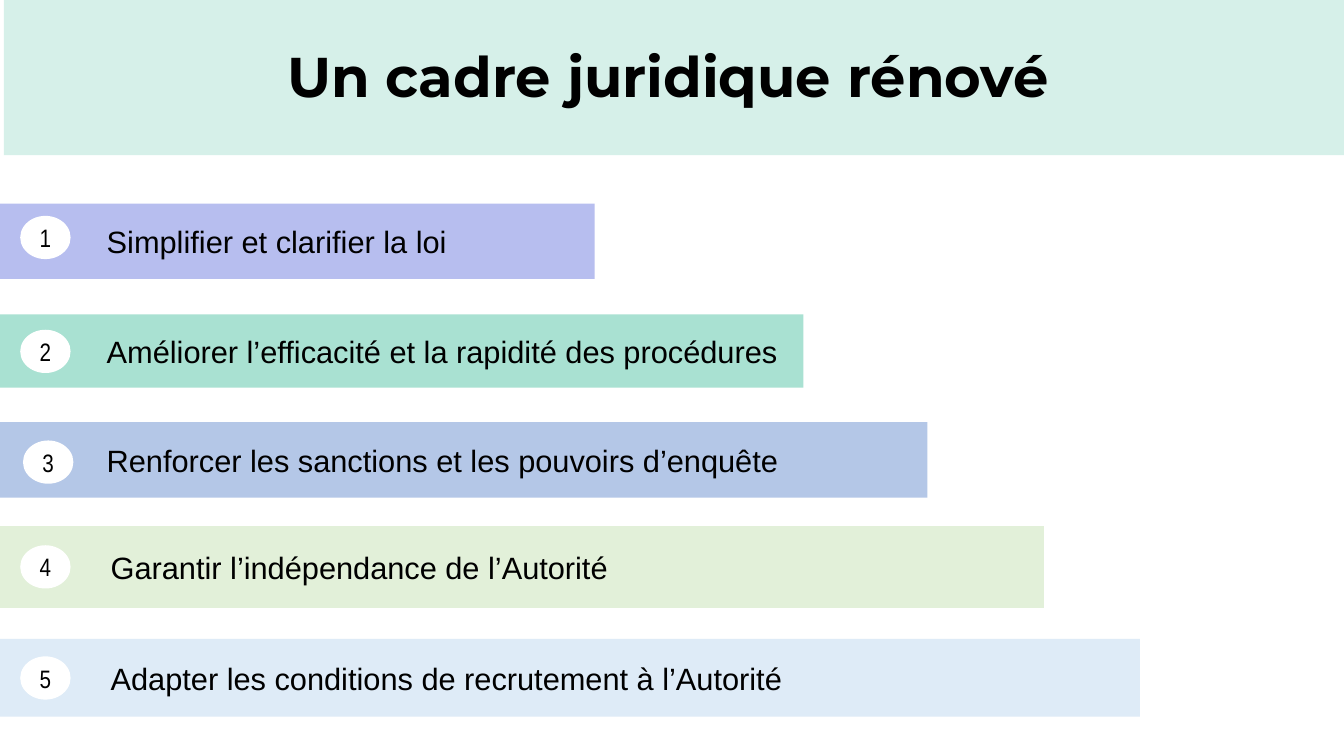
import pptx
import pptx.dml.color
import pptx.enum.shapes
import pptx.enum.text
import pptx.util
from lxml import etree
from pptx.oxml.ns import qn

Cm = pptx.util.Cm
RGBColor = pptx.dml.color.RGBColor
SHAPE = pptx.enum.shapes.MSO_SHAPE
ALIGN = pptx.enum.text.PP_ALIGN

BLACK = RGBColor(0x00, 0x00, 0x00)
WHITE = RGBColor(0xFF, 0xFF, 0xFF)
MINT = RGBColor(0x99, 0xDB, 0xCA)
LILAC = RGBColor(0xB7, 0xBE, 0xEF)
GREEN = RGBColor(0xA9, 0xE1, 0xD2)
BLUE = RGBColor(0xB4, 0xC7, 0xE7)
PALE_GREEN = RGBColor(0xE2, 0xF0, 0xD9)
PALE_BLUE = RGBColor(0xDE, 0xEB, 0xF7)

SLIDE_WIDTH, SLIDE_HEIGHT = 33.87, 19.05
BADGE_WIDTH, BADGE_HEIGHT = 1.27, 1.09
TEXT_INDENT = 2.79

# Text, colour, bar (left, top, width, height), badge (left, top), in cm
MEASURES = [
    ("Simplifier et clarifier la loi", LILAC,
     (-0.1, 5.13, 15.09, 1.9), (0.51, 5.44)),
    ("Améliorer l’efficacité et la rapidité des procédures", GREEN,
     (-0.1, 7.92, 20.35, 1.85), (0.51, 8.31)),
    ("Renforcer les sanctions et les pouvoirs d’enquête", BLUE,
     (-0.1, 10.64, 23.47, 1.9), (0.58, 11.1)),
    ("Garantir l’indépendance de l’Autorité", PALE_GREEN,
     (0, 13.26, 26.31, 2.06), (0.51, 13.74)),
    ("Adapter les conditions de recrutement à l’Autorité", PALE_BLUE,
     (0, 16.1, 28.73, 1.96), (0.51, 16.54)),
]


def write_text(box, text, font="Arial", size=22, bold=False,
               align=ALIGN.LEFT, indent=0.25):
    """Put one vertically centred paragraph in the box."""
    frame = box.text_frame
    frame.word_wrap = True
    frame.auto_size = pptx.enum.text.MSO_AUTO_SIZE.NONE
    frame.vertical_anchor = pptx.enum.text.MSO_ANCHOR.MIDDLE
    frame.margin_left = Cm(indent)
    para = frame.paragraphs[0]
    para.alignment = align
    span = para.add_run()
    span.text = text
    span.font.name = font
    span.font.size = pptx.util.Pt(size)
    span.font.bold = bold
    span.font.color.rgb = BLACK
    return para


def add_filled_shape(page, kind, place, colour):
    box = page.shapes.add_shape(kind, *map(Cm, place))
    box.shadow.inherit = False
    box.fill.solid()
    box.fill.fore_color.rgb = colour
    box.line.fill.background()
    return box


def add_title_band(page):
    band = add_filled_shape(page, SHAPE.RECTANGLE,
                            (0.1, 0, SLIDE_WIDTH, 3.91), MINT)
    colour = band.fill._xPr.find(qn("a:solidFill"))[0]
    etree.SubElement(colour, qn("a:alpha"), val="40000")
    title = page.shapes.title
    band._element.getparent().append(title._element)  # title above its band
    title.left, title.top = Cm(-0.1), Cm(0.38)
    title.width, title.height = Cm(SLIDE_WIDTH), Cm(3.25)
    para = write_text(title, "Un cadre juridique rénové", font="Montserrat",
                      size=40, bold=True, align=ALIGN.CENTER)
    para.line_spacing = 0.9
    para.space_after = pptx.util.Pt(6)


def add_bar(page, text, colour, place):
    bar = add_filled_shape(page, SHAPE.RECTANGLE, place, colour)
    write_text(bar, text, indent=TEXT_INDENT)


def add_badge(page, number, corner):
    badge = add_filled_shape(page, SHAPE.OVAL,
                             (*corner, BADGE_WIDTH, BADGE_HEIGHT), WHITE)
    write_text(badge, str(number), font="Arial Narrow", size=18,
               align=ALIGN.CENTER)


def main():
    deck = pptx.Presentation()
    deck.slide_width, deck.slide_height = Cm(SLIDE_WIDTH), Cm(SLIDE_HEIGHT)
    page = deck.slides.add_slide(deck.slide_layouts.get_by_name("Title Only"))
    add_title_band(page)
    for number, (text, colour, place, corner) in enumerate(MEASURES, 1):
        add_bar(page, text, colour, place)
        add_badge(page, number, corner)
    deck.save("out.pptx")


if __name__ == "__main__":
    main()
